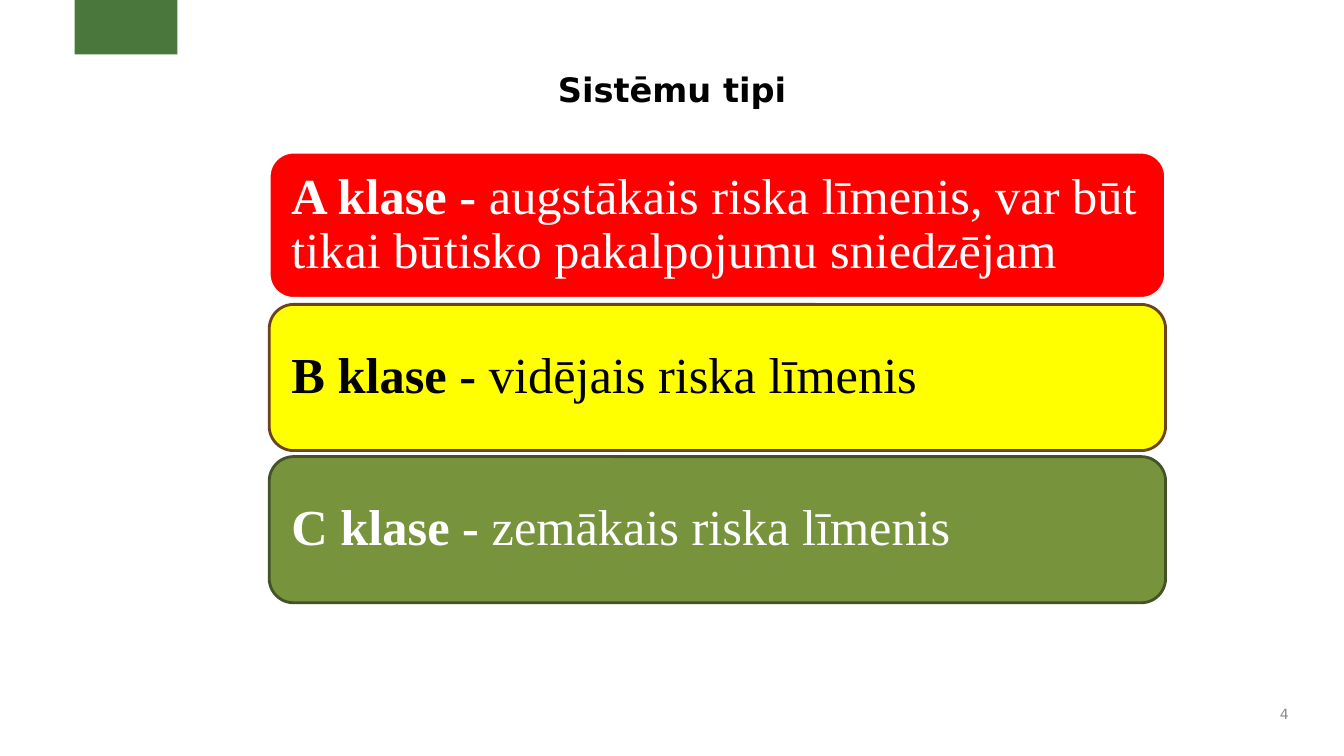
from pptx import Presentation
from pptx import util as u
from pptx.dml.color import RGBColor
from pptx.enum import shapes, text

WIDTH, HEIGHT = 13.33, 7.5
CARD_LEFT, CARD_TOP = 2.67, 1.51
CARD_WIDTH, CARD_HEIGHT, CARD_PITCH = 8.89, 1.45, 1.51
HEADING_FONT, CARD_FONT = "DejaVu Sans", "Times New Roman"
RISK_CLASSES = [
    ("A klase - ", "augstākais riska līmenis, var būt tikai būtisko pakalpojumu sniedzējam",
     "FF0000", "FFFFFF", "FFFFFF"),
    ("B klase - ", "vidējais riska līmenis", "FFFF00", "6C421F", "000000"),
    ("C klase - ", "zemākais riska līmenis", "77933C", "445227", "FFFFFF"),
]


def color(value):
    """Turn a hex string into a colour."""
    return RGBColor.from_string(value)


def box(*lengths):
    """Turn left, top, width and height in inches into lengths."""
    return [u.Inches(length) for length in lengths]


def style(paragraph, name, size, ink, align):
    """Set the font and alignment of a paragraph."""
    paragraph.alignment = align
    paragraph.font.name = name
    paragraph.font.size = u.Pt(size)
    paragraph.font.color.rgb = color(ink)


def add_block(slide, kind, place, fill, line=None):
    """Draw a filled shape, outlined if a line colour is given."""
    block = slide.shapes.add_shape(kind, *box(*place))
    block.shadow.inherit = False
    block.fill.solid()
    block.fill.fore_color.rgb = color(fill)
    if line:
        block.line.color.rgb = color(line)
        block.line.width = u.Pt(2)
    else:
        block.line.fill.background()
    return block


def add_label(slide, place, words, size, ink, align, bold=False):
    """Write one line of text, centred vertically."""
    frame = slide.shapes.add_textbox(*box(*place)).text_frame
    frame.word_wrap = True
    frame.vertical_anchor = text.MSO_ANCHOR.MIDDLE
    label = frame.paragraphs[0]
    label.text = words
    style(label, HEADING_FONT, size, ink, align)
    label.font.bold = bold


def add_risk_class(slide, row, name, level, fill, line, ink):
    """Draw the card of one risk class."""
    place = CARD_LEFT, CARD_TOP + row * CARD_PITCH, CARD_WIDTH, CARD_HEIGHT
    card = add_block(slide, shapes.MSO_SHAPE.ROUNDED_RECTANGLE, place, fill, line)
    frame = card.text_frame
    frame.word_wrap = True
    frame.vertical_anchor = text.MSO_ANCHOR.MIDDLE
    frame.margin_left = frame.margin_right = u.Inches(0.15)
    frame.margin_top = frame.margin_bottom = u.Inches(0.15)
    description = frame.paragraphs[0]
    description.line_spacing = 0.9
    style(description, CARD_FONT, 36, ink, text.PP_ALIGN.LEFT)
    for words, bold in ((name, True), (level, False)):
        run = description.add_run()
        run.text = words
        run.font.bold = bold


def main():
    """Build the slide and save it."""
    deck = Presentation()
    deck.slide_width, deck.slide_height = u.Inches(WIDTH), u.Inches(HEIGHT)
    slide = deck.slides.add_slide(deck.slide_layouts[6])
    add_block(slide, shapes.MSO_SHAPE.RECTANGLE, (0.74, 0, 1.02, 0.54), "4A773C")
    add_label(slide, (2.22, 0.61, 8.89, 0.54), "Sistēmu tipi", 24, "000000",
              text.PP_ALIGN.CENTER, bold=True)
    for row, risk_class in enumerate(RISK_CLASSES):
        add_risk_class(slide, row, *risk_class)
    add_label(slide, (12.44, 6.92, 0.44, 0.33), "4", 10, "898989", text.PP_ALIGN.RIGHT)
    deck.save("out.pptx")


if __name__ == "__main__":
    main()
